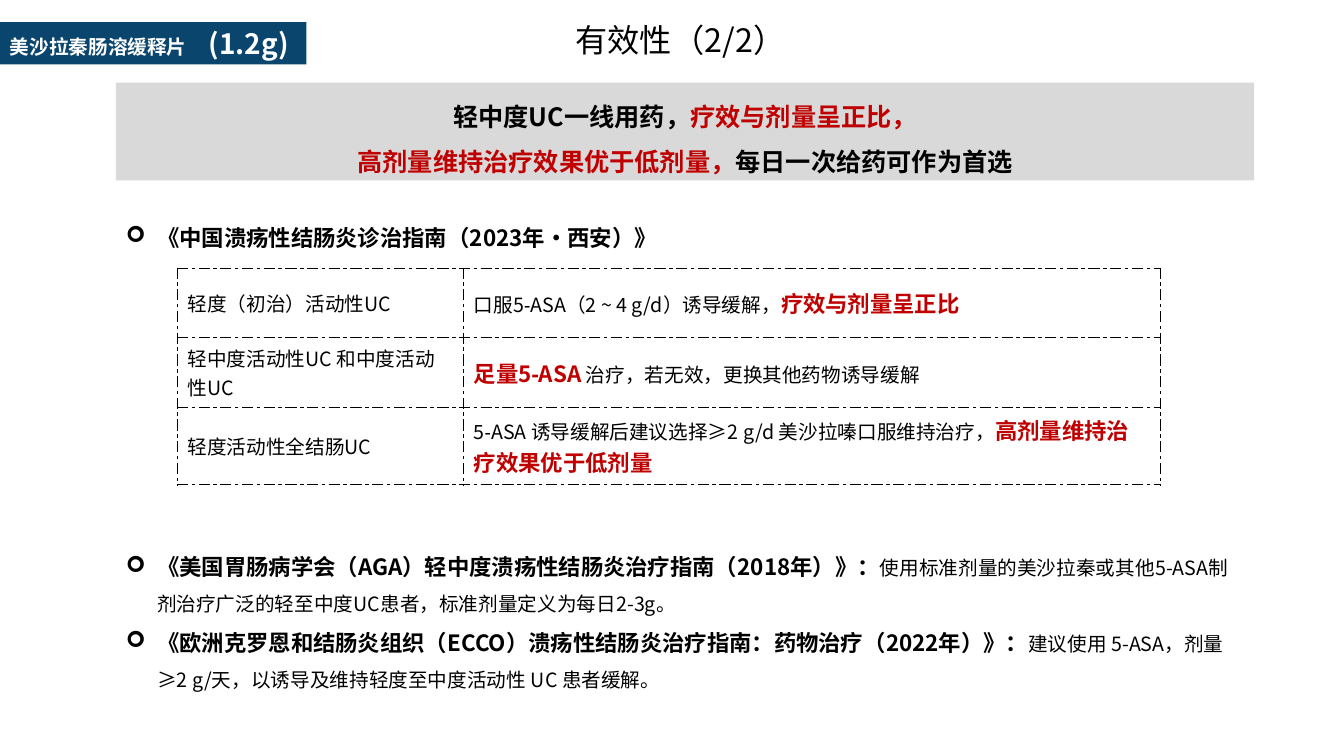
import pptx
import pptx.util
import pptx.dml.color
import pptx.enum.shapes
import pptx.enum.text
import pptx.oxml
import pptx.oxml.ns
from lxml import etree

Inches, Pt = pptx.util.Inches, pptx.util.Pt
ALIGN, ANCHOR = pptx.enum.text.PP_ALIGN, pptx.enum.text.MSO_ANCHOR
FONT = "Noto Sans CJK SC"
COLORS = {"navy": "0A456D", "grey": "D9D9D9", "white": "FFFFFF", "black": "000000", "red": "C00000"}

# Run styles: size, bold, colour
STYLES = {
    "title": (23, False, "black"),
    "tag": (14, True, "white"),
    "dose": (20, True, "white"),
    "claim": (18, True, "black"),
    "claim_red": (18, True, "red"),
    "guide": (16, True, "black"),
    "body": (14, False, "black"),
    "key": (16, True, "red"),
}


def rgb(name):
    return pptx.dml.color.RGBColor.from_string(COLORS[name])


def sub(parent, tag, **attrs):
    return etree.SubElement(parent, pptx.oxml.ns.qn(tag), attrs)


def write(p, runs, **fmt):
    for name, value in fmt.items():
        setattr(p, name, value)
    for text, style in runs:
        size, bold, color = STYLES[style]
        r = p.add_run()
        r.text = text
        for name, value in {"size": Pt(size), "bold": bold, "name": FONT}.items():
            setattr(r.font, name, value)
        r.font.color.rgb = rgb(color)
        sub(r._r.get_or_add_rPr(), "a:ea", typeface=FONT)


def add_box(s, box, fill=None, anchor=ANCHOR.TOP, wrap=True):
    box = [Inches(v) for v in box]
    if fill:
        sp = s.shapes.add_shape(pptx.enum.shapes.MSO_SHAPE.RECTANGLE, *box)
        sp.shadow.inherit = False
        sp.fill.solid()
        sp.fill.fore_color.rgb = rgb(fill)
        sp.line.fill.background()
    else:
        sp = s.shapes.add_textbox(*box)
    tf = sp.text_frame
    tf.word_wrap, tf.vertical_anchor = wrap, anchor
    return tf


def paragraphs(tf, count):
    return [tf.paragraphs[0]] + [tf.add_paragraph() for _ in range(count - 1)]


def add_tag(s, box):
    p = add_box(s, box, "navy", ANCHOR.MIDDLE).paragraphs[0]
    tabs = sub(p._p.get_or_add_pPr(), "a:tabLst")
    sub(tabs, "a:tab", pos=str(Inches(1.97)), algn="l")
    write(p, [("美沙拉秦肠溶缓释片\t", "tag"), ("(1.2g)", "dose")], alignment=ALIGN.LEFT)


def add_title(s, box):
    write(add_box(s, box).paragraphs[0], [("有效性（2/2）", "title")], line_spacing=0.9)


def add_claim(s, box, lines):
    tf = add_box(s, box, "grey", ANCHOR.MIDDLE)
    for p, runs in zip(paragraphs(tf, len(lines)), lines):
        write(p, runs, alignment=ALIGN.CENTER, line_spacing=1.5)


def add_guides(s, box, guides, fill=None):
    tf = add_box(s, box, fill)
    for i, (p, runs) in enumerate(zip(paragraphs(tf, len(guides)), guides)):
        pPr = p._p.get_or_add_pPr()
        pPr.set("marL", str(Inches(0.31)))
        pPr.set("indent", str(-Inches(0.31)))
        sub(pPr, "a:buFont", typeface="Wingdings")
        sub(pPr, "a:buChar", char="➢")
        last = i == len(guides) - 1
        write(p, runs, alignment=ALIGN.LEFT, line_spacing=1.5, space_after=Pt(6 if last else 0))


def dash_borders(cell):
    tcPr = cell._tc.get_or_add_tcPr()
    for i, side in enumerate(("a:lnL", "a:lnR", "a:lnT", "a:lnB")):
        ln = sub(tcPr, side, w=str(Pt(1)))
        sub(sub(ln, "a:solidFill"), "a:srgbClr", val=COLORS["black"])
        sub(ln, "a:prstDash", val="sysDashDot")
        tcPr.insert(i, ln)


def add_advice_table(s, box, widths, heights, rows):
    shape = s.shapes.add_table(len(rows), len(widths), *[Inches(v) for v in box])
    table = shape.table
    table.first_row = table.horz_banding = False
    for col, width in zip(table.columns, widths):
        col.width = Inches(width)
    for row, height, texts in zip(table.rows, heights, rows):
        row.height = Inches(height)
        for cell, runs in zip(row.cells, texts):
            cell.fill.background()
            cell.vertical_anchor = ANCHOR.MIDDLE
            dash_borders(cell)
            write(cell.text_frame.paragraphs[0], runs)


CLAIM = [
    [("轻中度UC一线用药，", "claim"), ("疗效与剂量呈正比，", "claim_red")],
    [("高剂量维持治疗效果优于低剂量，", "claim_red"), ("每日一次给药可作为首选", "claim")],
]
CHINA_GUIDE = [[("《中国溃疡性结肠炎诊治指南（2023年·西安）》", "guide")]]
ADVICE = [
    [[("轻度（初治）活动性UC", "body")],
     [("口服5⁃ASA（2 ~ 4 g/d）诱导缓解，", "body"), ("疗效与剂量呈正比", "key")]],
    [[("轻中度活动性UC 和中度活动性UC", "body")],
     [("足量5⁃ASA", "key"), (" 治疗，若无效，更换其他药物诱导缓解", "body")]],
    [[("轻度活动性全结肠UC", "body")],
     [("5⁃ASA 诱导缓解后建议选择≥2 g/d 美沙拉嗪口服维持治疗，", "body"),
      ("高剂量维持治疗效果优于低剂量", "key")]],
]
FOREIGN_GUIDES = [
    [("《美国胃肠病学会（AGA）轻中度溃疡性结肠炎治疗指南（2018年）》：", "guide"),
     ("使用标准剂量的美沙拉秦或其他5-ASA制剂治疗广泛的轻至中度UC患者，标准剂量定义为每日2-3g。", "body")],
    [("《欧洲克罗恩和结肠炎组织（ECCO）溃疡性结肠炎治疗指南：药物治疗（2022年）》：", "guide"),
     ("建议使用 5-ASA，剂量≥2 g/天，以诱导及维持轻度至中度活动性 UC 患者缓解。", "body")],
]


def main():
    prs = pptx.Presentation()
    prs.slide_width, prs.slide_height = Inches(13.33), Inches(7.5)
    s = prs.slides.add_slide(prs.slide_layouts[6])
    left, width = 1.15, 11.29

    # Header
    add_tag(s, (0, 0.22, 3.04, 0.42))
    add_title(s, (5.61, 0.2, 3.09, 0.47))

    # Guidelines and table of advice
    add_guides(s, (left, 2.04, width, 0.5), CHINA_GUIDE, "white")
    add_advice_table(s, (1.76, 2.66, 9.75, 2.15), (2.84, 6.91), (0.69, 0.69, 0.77), ADVICE)
    add_guides(s, (left, 5.31, width, 1.61), FOREIGN_GUIDES)

    # Key message
    add_claim(s, (left, 0.82, width, 0.97), CLAIM)
    prs.save("out.pptx")


if __name__ == "__main__":
    main()
